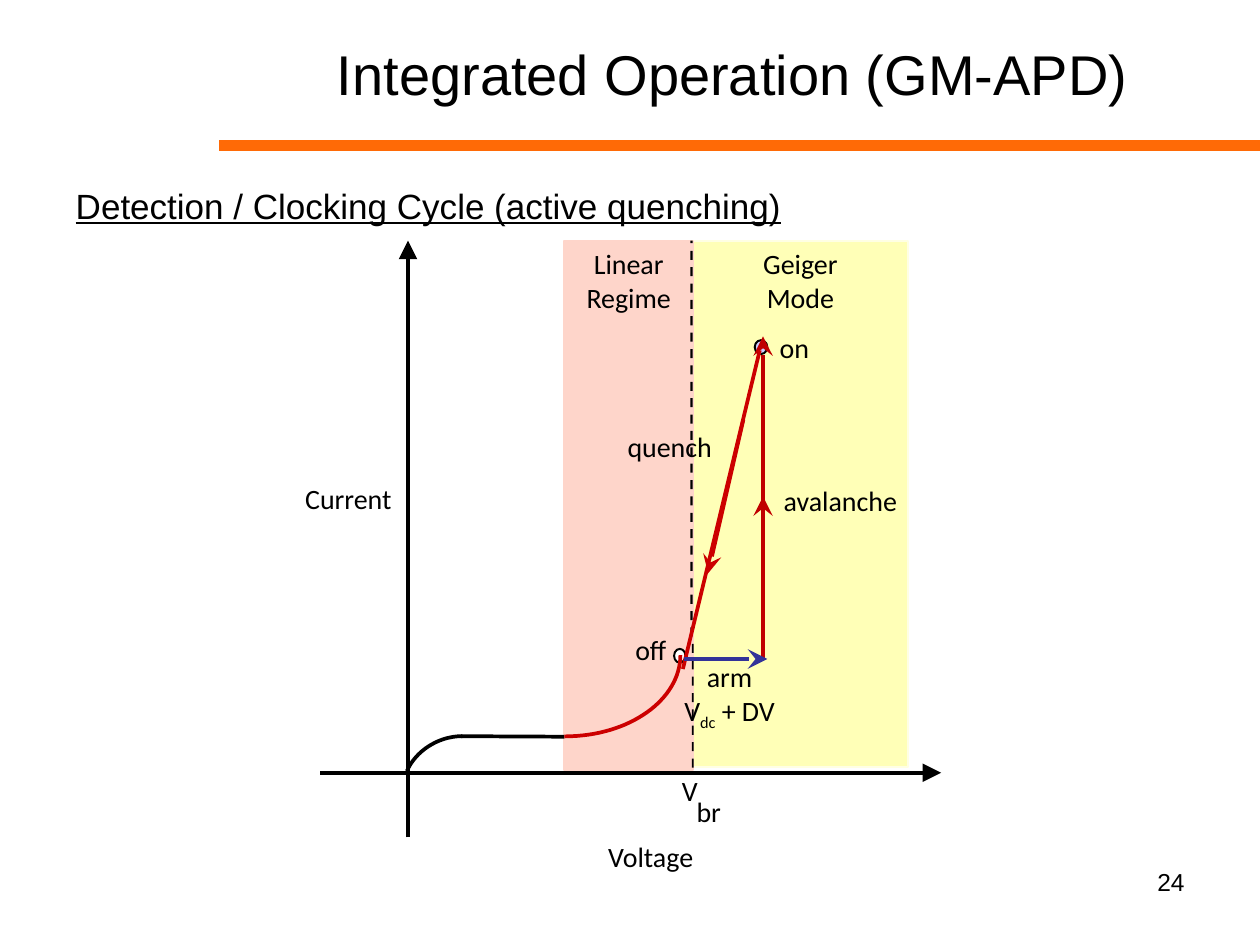
from dataclasses import dataclass

from lxml import etree
from pptx import Presentation
from pptx.dml.color import RGBColor
from pptx.enum.shapes import MSO_CONNECTOR, MSO_SHAPE
from pptx.enum.text import MSO_ANCHOR, PP_ALIGN
from pptx.oxml.ns import qn
from pptx.util import Inches, Pt

STRAIGHT = MSO_CONNECTOR.STRAIGHT
RECTANGLE, OVAL = MSO_SHAPE.RECTANGLE, MSO_SHAPE.OVAL
LEFT, CENTER, RIGHT = PP_ALIGN.LEFT, PP_ALIGN.CENTER, PP_ALIGN.RIGHT
TOP, MIDDLE = MSO_ANCHOR.TOP, MSO_ANCHOR.MIDDLE

COLORS = {
    "ink": "000000", "rule": "FF6A06", "arm": "333399", "curve": "CC0000",
    "avalanche": "C00000", "geiger": "FFFFB7", "geiger_edge": "FFFFE3",
    "linear": "FED5CA", "off": "FFFFFF", "on": "CCCCFF",
}
SLIDE_WIDTH, SLIDE_HEIGHT = Inches(10), Inches(7.5)
COLUMNS = 100
UNIT = SLIDE_WIDTH / COLUMNS
CURVE_STEPS = 32
DASHES, UPPER_DASHES = 32, 24
DASH_TOP, DASH_PITCH, DASH_LENGTH = 19.9, 1.3, 0.72


@dataclass(frozen=True)
class Area:
    col: float
    row: float
    cols: float
    rows: float

    def emu(self) -> list[int]:
        return [grid(v) for v in (self.col, self.row, self.cols, self.rows)]


@dataclass(frozen=True)
class Marker:
    kind: int
    area: Area
    fill: str
    edge: str = ""
    lines: tuple = ()


@dataclass(frozen=True)
class Stroke:
    start: tuple
    end: tuple
    color: str = "ink"
    width: float = 2.13
    head: str = ""
    tail: str = ""


@dataclass(frozen=True)
class Curve:
    controls: tuple
    color: str


@dataclass(frozen=True)
class Label:
    lines: tuple
    area: Area
    padded: bool = False


def breakdown_dash(index: int) -> Marker:
    """Place one dash of the breakdown line, thinner in its lower part."""
    col, cols = (54.8, 0.17) if index < UPPER_DASHES else (54.92, 0.14)
    row = DASH_TOP + index * DASH_PITCH
    return Marker(RECTANGLE, Area(col, row, cols, DASH_LENGTH), "ink")


REGIONS = [
    Marker(RECTANGLE, Area(55, 19.1, 17.05, 41.8), "geiger", "geiger_edge", ("Geiger", "Mode")),
    Marker(RECTANGLE, Area(44.8, 19.1, 10.2, 42), "linear", "linear", ("Linear Regime",)),
]
BREAKDOWN = [Marker(RECTANGLE, Area(54.8, 19.1, 0.17, 0.2), "ink"),
             *map(breakdown_dash, range(DASHES))]
AXES = [
    Stroke((25.4, 61.33), (74.7, 61.33), tail="triangle"),
    Stroke((32.38, 66.45), (32.38, 19.1), tail="triangle"),
    Stroke((36.6, 58.43), (44.8, 58.47)),
]
STATES = [
    Marker(OVAL, Area(53.5, 51.5, 0.9, 1.1), "off", "ink"),
    Marker(OVAL, Area(59.9, 27, 1, 1.1), "on", "ink"),
]
CURVES = [
    Curve(((32.3, 61.2), (33, 59.6), (34.8, 58.43), (36.7, 58.43)), "ink"),
    Curve(((54, 52), (54, 55.5), (50, 58.45), (44.8, 58.45)), "curve"),
]
CYCLE = [
    Stroke((60.56, 52.4), (60.56, 26.7), "avalanche", 2.25, tail="stealth"),
    Stroke((60.56, 51.2), (60.56, 39.4), "avalanche", 2.25, tail="stealth"),
    Stroke((54.2, 53.1), (60.3, 27.8), "curve"),
    Stroke((56.2, 45.5), (59, 33.3), "curve", head="stealth"),
    Stroke((54.3, 52.3), (60.9, 52.3), "arm", 2.25, tail="stealth"),
]
LABELS = [
    Label(("Voltage",), Area(48.15, 66.6, 7, 2.7)),
    Label(("V",), Area(54.1, 61.4, 1.3, 2.7)),
    Label(("br",), Area(55.25, 63.03, 2, 2.7)),
    Label(("on",), Area(61.85, 26.25, 2.4, 2.7)),
    Label(("off",), Area(50.4, 50.2, 2.5, 2.7)),
    Label(("Current",), Area(24.2, 38.25, 6.9, 2.7)),
    Label(("avalanche",), Area(60.95, 37.9, 11.5, 3.7), padded=True),
    Label(("quench",), Area(48.7, 33.6, 8.9, 3.7), padded=True),
    Label(("arm", ("V", "dc", " + DV")), Area(53.15, 51.87, 9.5, 6.4), padded=True),
]


def grid(units: float) -> int:
    """Convert grid units to slide lengths."""
    return round(units * UNIT)


def rgb(name: str) -> RGBColor:
    """Look up a named colour."""
    return RGBColor.from_string(COLORS[name])


def write(shape, lines, *, size=16, font="Calibri", align=CENTER, anchor=TOP,
          underline=None, wrap=True, padded=True) -> None:
    """Write lines, where a tuple line holds base, subscript and rest."""
    frame = shape.text_frame
    frame.word_wrap = wrap
    frame.vertical_anchor = anchor
    if not padded:
        frame.margin_left = frame.margin_right = frame.margin_top = frame.margin_bottom = 0
    for index, line in enumerate(lines):
        paragraph = frame.paragraphs[0] if index == 0 else frame.add_paragraph()
        paragraph.alignment = align
        for part, wording in enumerate((line,) if isinstance(line, str) else line):
            run = paragraph.add_run()
            run.text = wording
            run.font.size, run.font.name = Pt(size), font
            run.font.color.rgb = rgb("ink")
            run.font.underline = underline
            if part == 1:
                run.font._element.set("baseline", "-25000")


def draw_marker(slide, marker: Marker) -> None:
    """Draw a filled region, dash or state point."""
    shape = slide.shapes.add_shape(marker.kind, *marker.area.emu())
    shape.shadow.inherit = False
    shape.fill.solid()
    shape.fill.fore_color.rgb = rgb(marker.fill)
    if marker.edge:
        shape.line.color.rgb, shape.line.width = rgb(marker.edge), Pt(1.13)
    else:
        shape.line.fill.background()
    if marker.lines:
        write(shape, marker.lines)


def draw_stroke(slide, stroke: Stroke) -> None:
    """Draw a straight line with optional large arrowheads."""
    ends = [grid(v) for v in (*stroke.start, *stroke.end)]
    connector = slide.shapes.add_connector(STRAIGHT, *ends)
    connector.line.color.rgb, connector.line.width = rgb(stroke.color), Pt(stroke.width)
    outline = connector.line._get_or_add_ln()
    for tag, kind in (("a:headEnd", stroke.head), ("a:tailEnd", stroke.tail)):
        if kind:
            etree.SubElement(outline, qn(tag), type=kind, w="lg", len="lg")
    etree.SubElement(connector._element.spPr, qn("a:effectLst"))


def draw_curve(slide, curve: Curve) -> None:
    """Draw a cubic curve as a fine open outline."""
    points = []
    for step in range(CURVE_STEPS + 1):
        t = step / CURVE_STEPS
        weights = ((1 - t) ** 3, 3 * t * (1 - t) ** 2, 3 * t**2 * (1 - t), t**3)
        points.append(tuple(grid(sum(w * c for w, c in zip(weights, axis)))
                            for axis in zip(*curve.controls)))
    builder = slide.shapes.build_freeform(*points[0])
    builder.add_line_segments(points[1:], close=False)
    shape = builder.convert_to_shape()
    shape.shadow.inherit = False
    shape.fill.background()
    shape.line.color.rgb, shape.line.width = rgb(curve.color), Pt(2.13)


def add_text(slide, area: Area, lines, **style) -> None:
    """Add a text box in an area of the grid."""
    write(slide.shapes.add_textbox(*area.emu()), lines, **style)


def main() -> None:
    """Build and save the slide."""
    deck = Presentation()
    deck.slide_width, deck.slide_height = SLIDE_WIDTH, SLIDE_HEIGHT
    slide = deck.slides.add_slide(deck.slide_layouts[5])
    title = slide.shapes.title
    title.left, title.top, title.width, title.height = Area(20.45, 0.8, 75.4, 10).emu()
    write(title, ("Integrated Operation (GM-APD)",), size=32, font="Arial", anchor=MIDDLE)
    draw_stroke(slide, Stroke((17.4, 11.57), (COLUMNS, 11.57), "rule", 6))
    add_text(slide, Area(5.03, 14.15, 90, 6.5), ("Detection / Clocking Cycle (active quenching)",),
             size=20, font="Arial", align=LEFT, underline=True)
    add_text(slide, Area(71.7, 68.3, 23.3, 5.2), ("24",), size=14, font="Arial", align=RIGHT)
    for draw, parts in ((draw_marker, REGIONS + BREAKDOWN), (draw_stroke, AXES),
                        (draw_marker, STATES), (draw_curve, CURVES), (draw_stroke, CYCLE)):
        for part in parts:
            draw(slide, part)
    for label in LABELS:
        add_text(slide, label.area, label.lines, wrap=False, padded=label.padded)
    deck.save("out.pptx")


if __name__ == "__main__":
    main()
